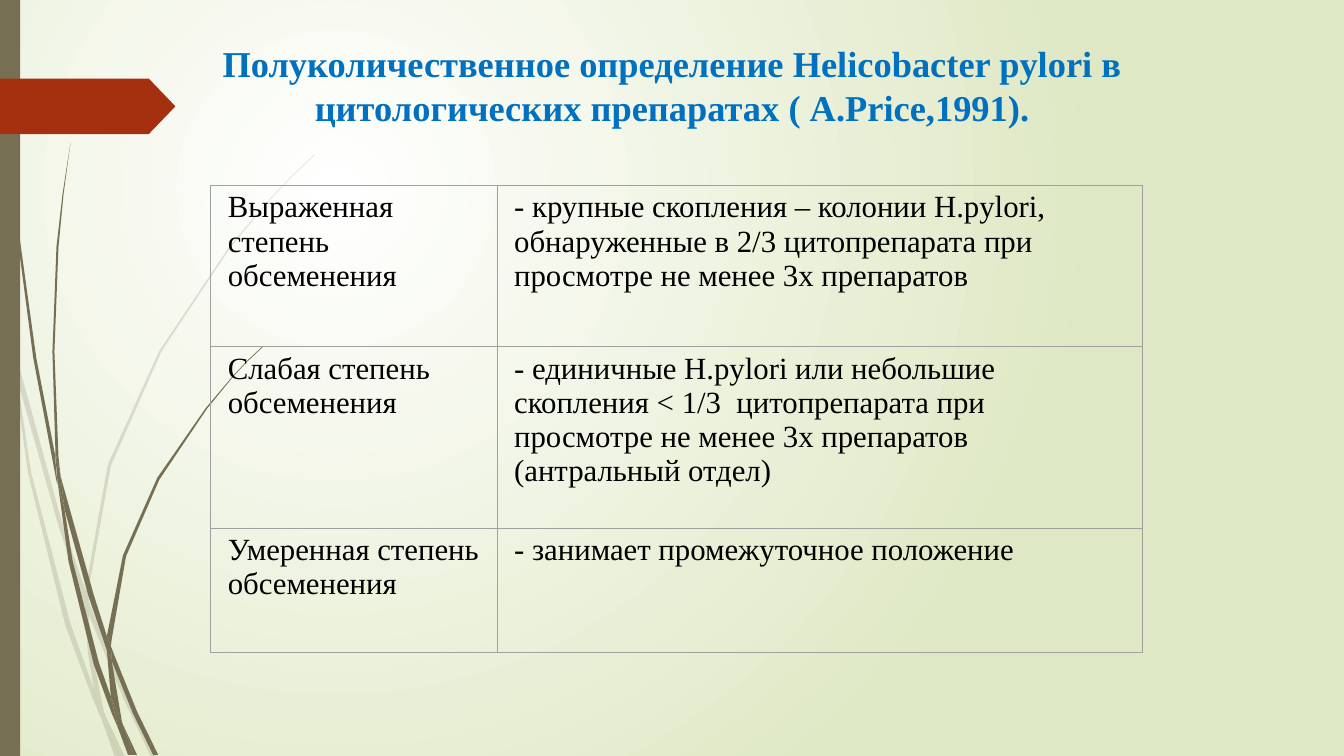
from lxml import etree
from pptx import Presentation
from pptx.dml.color import RGBColor
from pptx.enum.shapes import MSO_SHAPE as Preset
from pptx.enum.text import MSO_ANCHOR as Anchor, PP_ALIGN as Align
from pptx.oxml.ns import qn
from pptx.util import Inches, Pt

TITLE = ("Полуколичественное определение Helicobacter pylori в "
         "цитологических препаратах ( A.Price,1991).")
ROWS = [
    (["Выраженная степень", "обсеменения"],
     ["- крупные скопления – колонии H.pylori, обнаруженные в 2/3 "
      "цитопрепарата при просмотре не менее 3х препаратов"]),
    (["Слабая степень", "обсеменения"],
     ["- единичные H.pylori или небольшие скопления < 1/3  цитопрепарата при "
      "просмотре не менее 3х препаратов", "(антральный отдел)"]),
    (["Умеренная степень", "обсеменения"],
     ["- занимает промежуточное положение"]),
]
COLUMN_WIDTHS = [2.84, 6.4]
ROW_HEIGHTS = [1.6, 1.8, 1.23]
TABLE_LEFT, TABLE_TOP = 2.09, 1.84

OLIVE, RUST, BLUE, BLACK, GREY = "766F54", "A53010", "0070C0", "000000", "A0A0A0"
BACKDROP = ["FFFFFF", "DFE8C4"]
TITLE_FORMAT = {"name": "Times New Roman", "size": Pt(26), "bold": True}
CELL_FORMAT = {"name": "Times New Roman", "size": Pt(22), "bold": False}
CELL_MARGINS = {"margin_left": Inches(0.17), "margin_right": Inches(0.17),
                "margin_top": Inches(0.05), "margin_bottom": Inches(0.05)}

# Grass blades: outline points in hundredths of an inch
PALE_BLADES = [
    [(11, 350), (9, 322), (0, 282), (0, 299), (10, 344)],
    [(58, 522), (84, 599), (85, 586), (62, 520), (14, 345), (17, 376)],
    [(92, 607), (88, 596), (88, 610), (123, 694), (150, 751), (155, 751), (127, 692)],
    [(119, 751), (124, 751), (105, 711)],
    [(93, 683), (70, 619), (31, 469), (17, 376), (11, 350), (28, 470), (65, 621),
     (92, 693), (101, 714), (99, 707)],
    [(84, 599), (87, 646), (93, 683), (96, 692), (105, 711), (103, 706), (91, 646),
     (88, 610), (88, 608)],
    [(88, 584), (110, 462), (160, 349), (229, 245), (268, 198), (290, 175), (312, 154),
     (312, 153), (289, 175), (268, 197), (228, 244), (158, 348), (107, 461), (85, 584),
     (85, 586), (88, 596)],
    [(101, 714), (114, 751), (119, 751)],
    [(88, 608), (88, 610), (88, 596), (85, 586), (84, 599)],
    [(96, 692), (93, 683), (99, 707), (101, 714), (119, 751), (105, 711)],
]
DARK_BLADES = [
    [(7, 110), (17, 233), (33, 355), (56, 477), (57, 481), (55, 457), (55, 453),
     (36, 355), (19, 232), (8, 109), (5, 48), (4, 0), (3, 0), (4, 48)],
    [(88, 592), (106, 645), (106, 633), (106, 631), (93, 590), (60, 472), (64, 505)],
    [(113, 649), (110, 641), (111, 656), (132, 708), (152, 749), (157, 749), (136, 706)],
    [(110, 691), (98, 657), (72, 556), (64, 505), (57, 477), (68, 557), (93, 659),
     (111, 708), (117, 722), (116, 717)],
    [(60, 472), (58, 453), (54, 349), (58, 245), (63, 193), (70, 141), (62, 193),
     (56, 245), (52, 349), (55, 449)],
    [(133, 749), (136, 749), (122, 719)],
    [(57, 477), (64, 505), (60, 472), (55, 449), (55, 453)],
    [(111, 633), (125, 552), (158, 476), (205, 406), (231, 374), (245, 359), (261, 344),
     (260, 344), (245, 358), (231, 373), (204, 405), (156, 474), (122, 551), (106, 631),
     (110, 641)],
    [(117, 722), (127, 749), (131, 749)],
    [(106, 645), (110, 691), (116, 706), (122, 719), (121, 716), (111, 656), (109, 651)],
    [(106, 645), (109, 651), (111, 656), (110, 641), (106, 631), (106, 633)],
    [(116, 706), (110, 691), (116, 717), (117, 722), (130, 749), (133, 749), (122, 719)],
]


def rgb(color):
    return RGBColor.from_string(color)


def paint(shape, color, opacity=100):
    shape.shadow.inherit = False
    shape.line.fill.background()
    shape.fill.solid()
    shape.fill.fore_color.rgb = rgb(color)
    if opacity < 100:
        tint = shape.fill._xPr.find(qn("a:solidFill"))[0]
        etree.SubElement(tint, qn("a:alpha"), val=str(opacity * 1000))


def write(frame, lines, formats, color, align):
    for index, line in enumerate(lines):
        para = frame.add_paragraph() if index else frame.paragraphs[0]
        para.alignment = align
        span = para.add_run()
        span.text = line
        span.font.color.rgb = rgb(color)
        for key, value in formats.items():
            setattr(span.font, key, value)


def add_backdrop(page):
    """Radial gradient centred a quarter of the way into the slide."""
    fill = page.background.fill
    fill.gradient()
    for stop, color, position in zip(fill.gradient_stops, BACKDROP, (0, 1)):
        stop.color.rgb = rgb(color)
        stop.position = position
    gradient = page._element.cSld.find(".//" + qn("a:gradFill"))
    linear = gradient.find(qn("a:lin"))
    circle = etree.Element(qn("a:path"), {"path": "circle"})
    etree.SubElement(circle, qn("a:fillToRect"), l="50000", t="50000", r="100000", b="100000")
    gradient.replace(linear, circle)


def add_blades(page, blades, opacity):
    cluster = page.shapes.add_group_shape()
    for start, *others in blades:
        outline = cluster.shapes.build_freeform(*start, scale=Inches(0.01))
        outline.add_line_segments(others, close=True)
        paint(outline.convert_to_shape(), OLIVE, opacity)


def add_borders(cell, widths):
    properties = cell._tc.get_or_add_tcPr()
    for position, (side, width) in enumerate(widths.items()):
        border = etree.Element(qn("a:" + side), w=str(Pt(width)))
        solid = etree.SubElement(border, qn("a:solidFill"))
        etree.SubElement(solid, qn("a:srgbClr"), val=GREY)
        properties.insert(position, border)


def add_grades(page):
    frame = page.shapes.add_table(
        len(ROWS), len(COLUMN_WIDTHS), Inches(TABLE_LEFT), Inches(TABLE_TOP),
        Inches(sum(COLUMN_WIDTHS)), Inches(sum(ROW_HEIGHTS)))
    table = frame.table
    table.first_row = table.horz_banding = False
    for column, width in zip(table.columns, COLUMN_WIDTHS):
        column.width = Inches(width)
    last_row, last_column = len(ROWS) - 1, len(COLUMN_WIDTHS) - 1
    for r, (texts, height) in enumerate(zip(ROWS, ROW_HEIGHTS)):
        table.rows[r].height = Inches(height)
        for c, lines in enumerate(texts):
            cell = table.cell(r, c)
            cell.fill.background()
            cell.vertical_anchor = Anchor.TOP
            for key, value in CELL_MARGINS.items():
                setattr(cell, key, value)
            write(cell.text_frame, lines, CELL_FORMAT, BLACK, Align.LEFT)
            outer = {"lnL": c == 0, "lnR": c == last_column, "lnT": r == 0, "lnB": r == last_row}
            add_borders(cell, {side: 1 if edge else 0.5 for side, edge in outer.items()})


def main():
    deck = Presentation()
    deck.slide_width, deck.slide_height = Inches(13.33), Inches(7.5)
    page = deck.slides.add_slide(deck.slide_layouts[5])
    add_backdrop(page)
    add_blades(page, PALE_BLADES, 20)
    add_blades(page, DARK_BLADES, 100)

    strip = page.shapes.add_shape(Preset.RECTANGLE, 0, 0, Inches(0.2), deck.slide_height)
    paint(strip, OLIVE)
    marker = page.shapes.add_shape(Preset.PENTAGON, 0, Inches(0.78), Inches(1.74), Inches(0.55))
    marker.adjustments[0] = 0.48
    paint(marker, RUST)

    title = page.shapes.title
    title.left, title.top, title.width, title.height = map(Inches, (1.67, 0.36, 10, 0.97))
    title.text_frame.word_wrap = True
    title.text_frame.vertical_anchor = Anchor.TOP
    write(title.text_frame, [TITLE], TITLE_FORMAT, BLUE, Align.CENTER)
    # The title placeholder comes first in the tree; it belongs above the decoration
    page.shapes._spTree.append(title._element)

    add_grades(page)
    deck.save("out.pptx")


if __name__ == "__main__":
    main()
